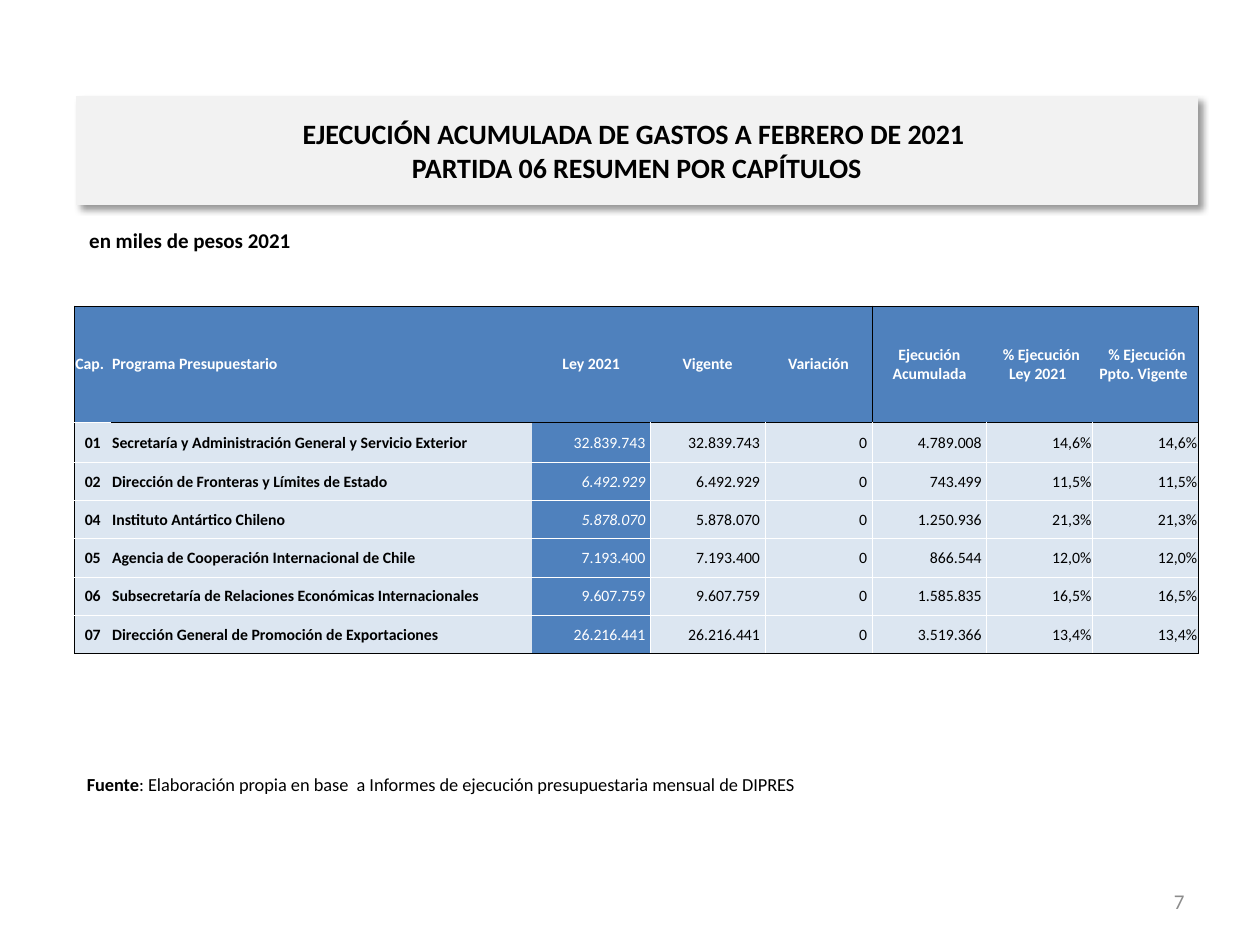
from pptx import Presentation
from pptx.dml.color import RGBColor
from pptx.enum.shapes import MSO_SHAPE
from pptx.enum.text import MSO_ANCHOR, PP_ALIGN
from pptx.oxml import parse_xml
from pptx.oxml.ns import nsdecls
from pptx.util import Cm, Pt

RECT = MSO_SHAPE.RECTANGLE
MIDDLE, TOP = MSO_ANCHOR.MIDDLE, MSO_ANCHOR.TOP
LEFT, MID, RIGHT = PP_ALIGN.LEFT, PP_ALIGN.CENTER, PP_ALIGN.RIGHT
BLACK, WHITE, GRAY = "000000", "FFFFFF", "8C8C8C"
BLUE, PALE, PANEL = "4F81BD", "DCE6F1", "F2F2F2"

COLS = [0.74, 8.48, 2.39, 2.31, 2.16, 2.31, 2.13, 2.13]
ROWS = [2.34, 0.81] + [0.77] * 5
HEADS = ["Cap.", "Programa Presupuestario", "Ley 2021", "Vigente", "Variación",
         "Ejecución Acumulada", " % Ejecución Ley 2021 ", " % Ejecución Ppto. Vigente "]
DATA = [
    ("01", "Secretaría y Administración General y Servicio Exterior",
     "32.839.743", "4.789.008", "14,6%"),
    ("02", "Dirección de Fronteras y Límites de Estado",
     "6.492.929", "743.499", "11,5%"),
    ("04", "Instituto Antártico Chileno",
     "5.878.070", "1.250.936", "21,3%"),
    ("05", "Agencia de Cooperación Internacional de Chile",
     "7.193.400", "866.544", "12,0%"),
    ("06", "Subsecretaría de Relaciones Económicas Internacionales",
     "9.607.759", "1.585.835", "16,5%"),
    ("07", "Dirección General de Promoción de Exportaciones",
     "26.216.441", "3.519.366", "13,4%"),
]
SLANT = ("02", "04")


def paint(color):
    """Turn a hex string into a colour."""
    return RGBColor.from_string(color)


def style(para, size, color=BLACK, bold=False, align=LEFT):
    """Set the alignment and font of a paragraph."""
    para.alignment = align
    font = para.font
    font.name, font.size, font.bold = "Calibri", Pt(size), bold
    font.color.rgb = paint(color)


def add_text(slide, box, text, size, color=BLACK, bold=False, align=LEFT, anchor=TOP):
    """Add a one-paragraph text box and return its paragraph."""
    frame = slide.shapes.add_textbox(*map(Cm, box)).text_frame
    frame.word_wrap = True
    frame.vertical_anchor = anchor
    para = frame.paragraphs[0]
    para.text = text
    style(para, size, color, bold, align)
    return para


def add_title(slide, box, text):
    """Add the title panel with its soft shadow."""
    shape = slide.shapes.add_shape(RECT, *map(Cm, box))
    shape.fill.solid()
    shape.fill.fore_color.rgb = paint(PANEL)
    shape.line.color.rgb = paint(PANEL)
    shape.line.width = Pt(0.75)
    shape.shadow.inherit = False
    shape._element.spPr.find("{*}effectLst").append(parse_xml(
        f'<a:outerShdw {nsdecls("a")} blurRad="{Pt(4)}" dist="{Pt(3)}" dir="2700000" '
        f'algn="tl" rotWithShape="0"><a:srgbClr val="{BLACK}">'
        '<a:alpha val="40000"/></a:srgbClr></a:outerShdw>'))
    frame = shape.text_frame
    frame.word_wrap = True
    frame.vertical_anchor = MIDDLE
    para = frame.paragraphs[0]
    para.text = text
    style(para, 16, bold=True, align=MID)


def set_edge(cell, side, color):
    """Draw one cell border, or none when there is no colour."""
    fill = (f'<a:solidFill><a:srgbClr val="{color}"/></a:solidFill>'
            if color else "<a:noFill/>")
    cell._tc.get_or_add_tcPr().append(parse_xml(
        f'<a:ln{side} {nsdecls("a")} w="{Pt(0.5)}">{fill}</a:ln{side}>'))


def side_color(row, edge):
    """Give the colour of the vertical rule before column number edge."""
    if edge in (0, len(COLS)):
        return BLACK
    if row == 0:
        return BLACK if edge == 5 else None
    return WHITE if edge > 2 else None


def level_color(edge, col):
    """Give the colour of the horizontal rule above row number edge."""
    outer = edge in (0, len(ROWS))
    return BLACK if outer or (edge == 1 and col > 0) else WHITE


def fill_cell(cell, row, col, text):
    """Write and format one cell by its place in the grid."""
    head = row == 0
    dark = head or col == 2
    number = not head and 2 <= col <= 5
    cell.margin_left = cell.margin_top = Cm(0.02)
    cell.margin_right = Cm(0.1 if number else 0.02)
    cell.margin_bottom = 0
    cell.vertical_anchor = MIDDLE
    if head:
        align = MID if col > 1 else LEFT
    else:
        align = (MID, LEFT)[col] if col < 2 else RIGHT
    para = cell.text_frame.paragraphs[0]
    para.text = text
    style(para, 9, WHITE if dark else BLACK, head or col < 2, align)
    set_edge(cell, "L", side_color(row, col))
    set_edge(cell, "R", side_color(row, col + 1))
    set_edge(cell, "T", level_color(row, col))
    set_edge(cell, "B", level_color(row + 1, col))
    cell.fill.solid()
    cell.fill.fore_color.rgb = paint(BLUE if dark else PALE)


def add_grid(slide, left, top):
    """Add the budget table."""
    size = map(Cm, (left, top, sum(COLS), sum(ROWS)))
    table = slide.shapes.add_table(len(ROWS), len(COLS), *size).table
    table.first_row = table.horz_banding = False
    for col, width in zip(table.columns, COLS):
        col.width = Cm(width)
    for row, height in zip(table.rows, ROWS):
        row.height = Cm(height)
    lines = [HEADS] + [(cap, name, law, law, "0", spent, rate, rate)
                       for cap, name, law, spent, rate in DATA]
    for row, line in enumerate(lines):
        for col, text in enumerate(line):
            fill_cell(table.cell(row, col), row, col, text)
        if line[0] in SLANT:
            table.cell(row, 2).text_frame.paragraphs[0].font.italic = True


def main():
    """Build the slide and save it."""
    deck = Presentation()
    deck.slide_width, deck.slide_height = Cm(25.4), Cm(19.05)
    slide = deck.slides.add_slide(deck.slide_layouts[6])
    source = add_text(slide, (1.5, 15.47, 21.97, 0.66), "", 10.5)
    source.add_run().text = "Fuente"
    source.runs[0].font.bold = True
    source.add_run().text = (": Elaboración propia en base  a Informes de ejecución "
                             "presupuestaria mensual de DIPRES")
    add_text(slide, (18.21, 17.65, 5.92, 1.02), "7", 12, GRAY, align=RIGHT, anchor=MIDDLE)
    add_text(slide, (1.55, 4.47, 21.84, 0.56), "en miles de pesos 2021", 12, bold=True)
    add_title(slide, (1.55, 1.94, 22.58, 2.18),
              "EJECUCIÓN ACUMULADA DE GASTOS A FEBRERO DE 2021 \v"
              "PARTIDA 06 RESUMEN POR CAPÍTULOS")
    add_grid(slide, 1.5, 6.17)
    deck.save("out.pptx")


if __name__ == "__main__":
    main()
